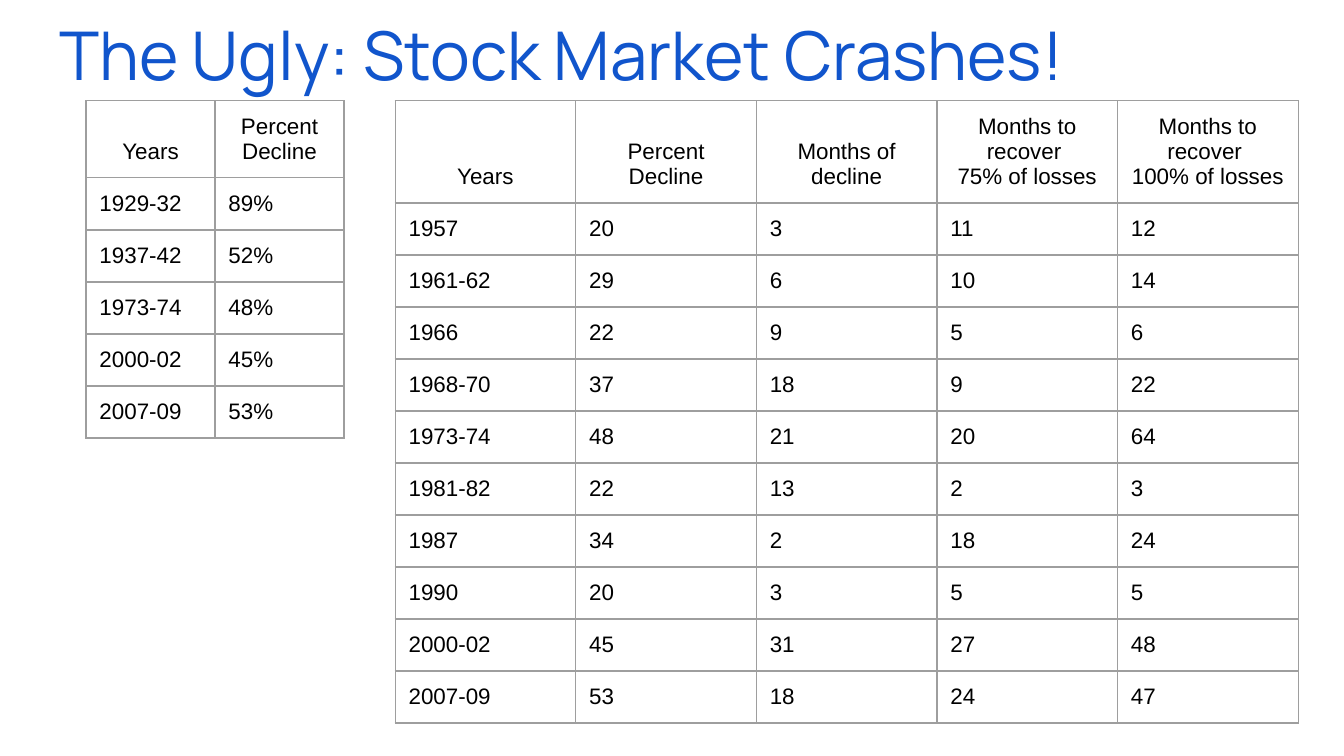
from dataclasses import dataclass

from lxml.etree import SubElement
from pptx import Presentation
from pptx.dml.color import RGBColor
from pptx.enum.text import MSO_ANCHOR, MSO_AUTO_SIZE, PP_ALIGN
from pptx.oxml.ns import qn
from pptx.util import Inches, Pt


@dataclass(frozen=True)
class Theme:
    title_color: str = "1155CC"
    text_color: str = "000000"
    border_color: str = "9E9E9E"
    title_font: str = "Manrope"
    table_font: str = "Arial"
    title_size: int = 36
    table_size: int = 12
    border_width: float = 0.75
    inset: float = 0.1


THEME = Theme()

# Table contents, header row first
MAJOR_CRASHES = [
    ["Years", "Percent Decline"],
    ["1929-32", "89%"],
    ["1937-42", "52%"],
    ["1973-74", "48%"],
    ["2000-02", "45%"],
    ["2007-09", "53%"],
]
RECOVERIES = [
    ["Years", "Percent Decline", "Months of decline",
     "Months to recover \n75% of losses", "Months to recover \n100% of losses"],
    ["1957", "20", "3", "11", "12"],
    ["1961-62", "29", "6", "10", "14"],
    ["1966", "22", "9", "5", "6"],
    ["1968-70", "37", "18", "9", "22"],
    ["1973-74", "48", "21", "20", "64"],
    ["1981-82", "22", "13", "2", "3"],
    ["1987", "34", "2", "18", "24"],
    ["1990", "20", "3", "5", "5"],
    ["2000-02", "45", "31", "27", "48"],
    ["2007-09", "53", "18", "24", "47"],
]


def set_attributes(target, values):
    for name, value in values.items():
        setattr(target, name, value)


def format_text(frame, font, size, color, align):
    for para in frame.paragraphs:
        para.alignment = align
        for span in para.runs:
            set_attributes(span.font, {"name": font, "size": Pt(size)})
            span.font.color.rgb = RGBColor.from_string(color)


def margins():
    sides = ("left", "top", "right", "bottom")
    return {f"margin_{side}": Inches(THEME.inset) for side in sides}


def add_title(page, text):
    title = page.shapes.title
    set_attributes(title, {"left": Inches(0.34), "top": Inches(0),
                           "width": Inches(9.32), "height": Inches(0.63)})
    frame = title.text_frame
    frame.text = text
    set_attributes(frame, {**margins(), "word_wrap": True,
                           "auto_size": MSO_AUTO_SIZE.NONE,
                           "vertical_anchor": MSO_ANCHOR.TOP})
    format_text(frame, THEME.title_font, THEME.title_size,
                THEME.title_color, PP_ALIGN.LEFT)


def add_borders(cell):
    properties = cell._tc.get_or_add_tcPr()
    for position, side in enumerate(("lnL", "lnR", "lnT", "lnB")):
        line = SubElement(properties, qn(f"a:{side}"),
                          w=str(Pt(THEME.border_width)))
        fill = SubElement(line, qn("a:solidFill"))
        SubElement(fill, qn("a:srgbClr"), val=THEME.border_color)
        properties.insert(position, line)  # borders come before the fill


def format_cell(cell, text, is_header):
    cell.text = text
    anchor = MSO_ANCHOR.BOTTOM if is_header else MSO_ANCHOR.TOP
    set_attributes(cell, {**margins(), "vertical_anchor": anchor})
    cell.fill.background()
    add_borders(cell)
    format_text(cell.text_frame, THEME.table_font, THEME.table_size,
                THEME.text_color,
                PP_ALIGN.CENTER if is_header else PP_ALIGN.LEFT)


def add_data_table(page, data, left, width, header_height, row_height):
    heights = [header_height] + [row_height] * (len(data) - 1)
    # Columns share the table width equally
    table = page.shapes.add_table(
        len(data), len(data[0]), Inches(left), Inches(0.75),
        Inches(width), Inches(sum(heights))).table
    set_attributes(table, {"first_row": False, "horz_banding": False})
    for index, (row, height, texts) in enumerate(zip(table.rows, heights, data)):
        row.height = Inches(height)
        for cell, text in zip(row.cells, texts):
            format_cell(cell, text, is_header=index == 0)


def main():
    # Widescreen 16:9 page
    deck = Presentation()
    set_attributes(deck, {"slide_width": Inches(10),
                          "slide_height": Inches(10 * 9 / 16)})
    page = deck.slides.add_slide(deck.slide_layouts[5])

    # Title
    add_title(page, "The Ugly: Stock Market Crashes!")

    # Largest declines on the left, recovery times on the right
    add_data_table(page, MAJOR_CRASHES, left=0.64, width=1.92,
                   header_height=0.32, row_height=0.32)
    add_data_table(page, RECOVERIES, left=2.94, width=6.72,
                   header_height=0.6, row_height=0.34)

    deck.save("out.pptx")


if __name__ == "__main__":
    main()
